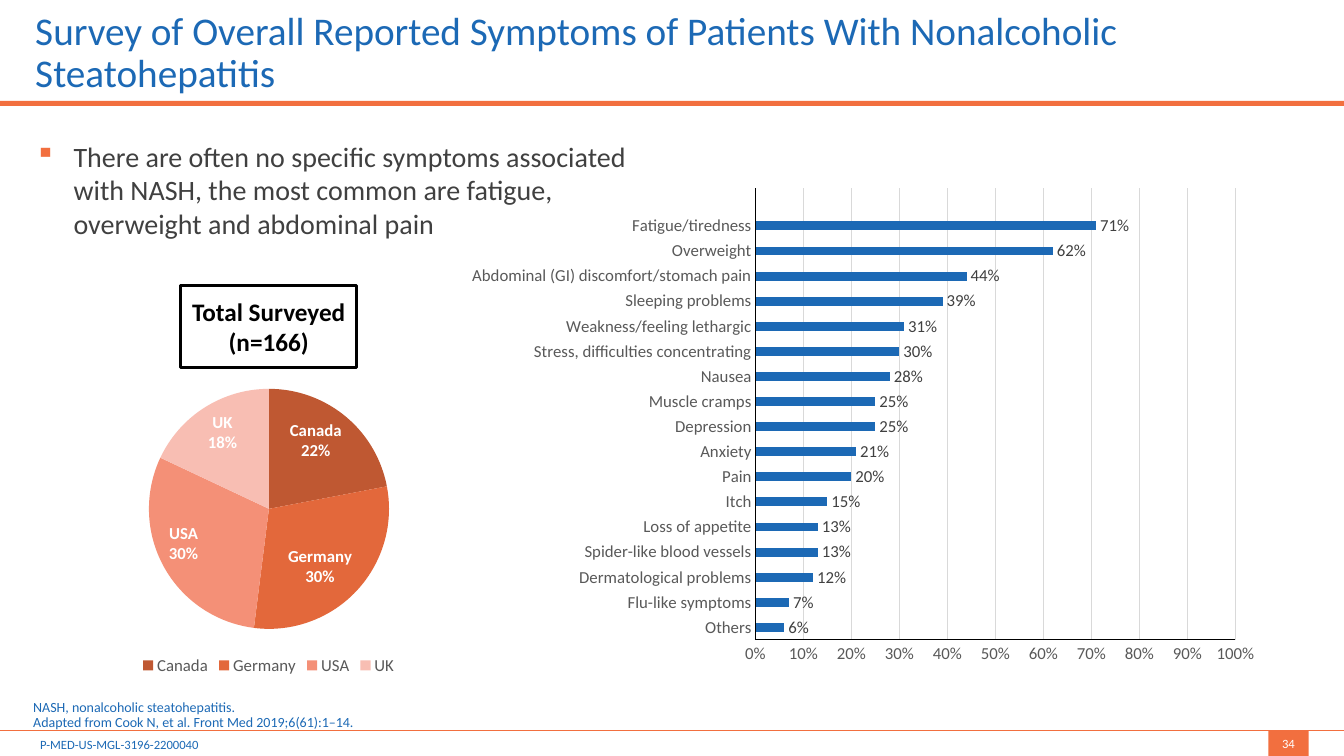
from pptx import Presentation
from pptx.chart.data import CategoryChartData
from pptx.dml.color import RGBColor
from pptx.enum import chart as ch, shapes, text
from pptx.oxml import parse_xml
from pptx.oxml.ns import nsdecls
from pptx.util import Inches, Pt

COLORS = {"orange": "F26F3F", "blue": "1C69B5", "body": "404040", "axis": "595959",
          "grid": "D9D9D9", "black": "000000", "white": "FFFFFF"}
COUNTRIES = {"Canada": (22, "BF5832"), "Germany": (30, "E3683B"),
             "USA": (30, "F49077"), "UK": (18, "F8BEB3")}
# Bottom to top; the unnamed last entry keeps a free row above the bars.
SYMPTOMS = {
    "Others": 0.06, "Flu-like symptoms": 0.07, "Dermatological problems": 0.12,
    "Spider-like blood vessels": 0.13, "Loss of appetite": 0.13, "Itch": 0.15,
    "Pain": 0.2, "Anxiety": 0.21, "Depression": 0.25, "Muscle cramps": 0.25,
    "Nausea": 0.28, "Stress, difficulties concentrating": 0.3,
    "Weakness/feeling lethargic": 0.31, "Sleeping problems": 0.39,
    "Abdominal (GI) discomfort/stomach pain": 0.44, "Overweight": 0.62,
    "Fatigue/tiredness": 0.71, "": None}


def rgb(name):
    return RGBColor.from_string(COLORS.get(name, name))


def set_font(font, size, color, bold=False):
    font.name, font.size, font.bold = "Calibri", Pt(size), bold
    font.color.rgb = rgb(color)


def set_line(line, color, width):
    line.color.rgb = rgb(color)
    line.width = Pt(width)


def write(sp, words, size, color, bold=False, margins=(0, 0, 0, 0), wrap=True,
          anchor=text.MSO_ANCHOR.TOP, align=text.PP_ALIGN.LEFT, spacing=None):
    tf = sp.text_frame
    tf.text = words
    tf.word_wrap, tf.vertical_anchor = wrap, anchor
    tf.margin_left, tf.margin_top, tf.margin_right, tf.margin_bottom = map(Inches, margins)
    for p in tf.paragraphs:
        p.alignment, p.line_spacing = align, spacing
        for r in p.runs:
            set_font(r.font, size, color, bold)
    return tf


def add_text(s, box, words, size, color, **options):
    return write(s.shapes.add_textbox(*map(Inches, box)), words, size, color, **options)


def add_rect(s, box, fill=None):
    sp = s.shapes.add_shape(shapes.MSO_SHAPE.RECTANGLE, *map(Inches, box))
    sp.shadow.inherit = False
    if fill:
        sp.fill.solid()
        sp.fill.fore_color.rgb = rgb(fill)
    else:
        sp.fill.background()
    sp.line.fill.background()
    return sp


def add_header(s, box):
    """Title with the orange rule along its lower edge."""
    x, y, w, h = box
    add_rect(s, (0, y + h, 13.33, 0.05), "orange")
    add_text(s, box, "Survey of Overall Reported Symptoms of Patients With "
             "Nonalcoholic Steatohepatitis", 28, "blue", margins=(0, 0.05, 0, 0.05),
             anchor=text.MSO_ANCHOR.BOTTOM, spacing=0.9)


def add_footer(s, box):
    """Footnote, rule, document code and page number."""
    x, y, w, h = box
    add_text(s, (x + 0.33, y - 0.3, 11.13, 0.3),
             "NASH, nonalcoholic steatohepatitis.\v"
             "Adapted from Cook N, et al. Front Med 2019;6(61):1–14.",
             10, "blue", anchor=text.MSO_ANCHOR.BOTTOM, spacing=0.9)
    rule = s.shapes.add_connector(shapes.MSO_CONNECTOR.STRAIGHT,
                                  *map(Inches, (x, y, x + w, y)))
    set_line(rule.line, "orange", 1)
    rule._element.spPr.append(parse_xml(f"<a:effectLst {nsdecls('a')}/>"))
    add_text(s, (x + 0.3, y + 0.01, 1.78, h), "P-MED-US-MGL-3196-2200040", 9, "blue",
             margins=(0.1, 0.05, 0.1, 0.05), wrap=False)
    write(add_rect(s, (x + 12.58, y, 0.4, h), "orange"), "34", 9, "white",
          anchor=text.MSO_ANCHOR.MIDDLE, align=text.PP_ALIGN.CENTER)


def add_key_message(s, box):
    tf = add_text(s, box, "There are often no specific symptoms associated with NASH, "
                  "the most common are fatigue, overweight and abdominal pain", 20, "body")
    pPr = tf.paragraphs[0]._p.get_or_add_pPr()
    pPr.set("marL", str(Inches(0.38)))
    pPr.set("indent", str(Inches(-0.38)))
    pPr.append(parse_xml(f'<a:buClr {nsdecls("a")}><a:srgbClr val="{COLORS["orange"]}"/></a:buClr>'))
    pPr.append(parse_xml(f'<a:buChar {nsdecls("a")} char="▪"/>'))


def add_chart(s, box, kind, values, plot_box, number_format="General"):
    """Chart with one series; plot_box gives the inner plot as shares of the chart."""
    data = CategoryChartData(number_format=number_format)
    data.categories = list(values)
    data.add_series("Series 1", list(values.values()))
    chart = s.shapes.add_chart(kind, *map(Inches, box), data).chart
    chart.has_title = False
    set_font(chart.font, 10, "black")
    area = chart._chartSpace.chart.plotArea
    for old in area.findall("{*}layout"):
        area.remove(old)
    sizes = "".join(f'<c:{k} val="{v}"/>' for k, v in zip("xywh", plot_box))
    area.insert(0, parse_xml(
        f'<c:layout {nsdecls("c")}><c:manualLayout><c:layoutTarget val="inner"/>'
        f'<c:xMode val="edge"/><c:yMode val="edge"/>{sizes}</c:manualLayout></c:layout>'))
    return chart


def add_country_pie(s, box):
    """Pie of surveyed countries under its framed heading."""
    x, y, w, h = box
    chart = add_chart(s, box, ch.XL_CHART_TYPE.PIE,
                      {name: value for name, (value, _) in COUNTRIES.items()},
                      (0.18, 0.045, 0.642, 0.79))
    chart.has_legend = True
    chart.legend.position = ch.XL_LEGEND_POSITION.BOTTOM
    chart.legend.include_in_layout = False
    set_font(chart.legend.font, 12, "axis")
    plot = chart.plots[0]
    plot.vary_by_categories = True
    for i, (_, color) in enumerate(COUNTRIES.values()):
        fill = plot.series[0].points[i].format.fill
        fill.solid()
        fill.fore_color.rgb = rgb(color)
    labels = plot.series[0].data_labels
    set_font(labels.font, 12, "white", True)
    labels.show_value = False
    labels.show_category_name = labels.show_percentage = True
    labels.position = ch.XL_LABEL_POSITION.INSIDE_END
    labels._element.find("{*}showBubbleSize").addnext(
        parse_xml(f"<c:separator {nsdecls('c')}>\n</c:separator>"))

    heading = add_rect(s, (x + 0.98, y - 0.89, 1.75, 0.82))
    set_line(heading.line, "black", 2.25)
    write(heading, "Total Surveyed\n(n=166)", 18, "black", bold=True, wrap=False,
          anchor=text.MSO_ANCHOR.MIDDLE, align=text.PP_ALIGN.CENTER)


def add_symptom_bars(s, box):
    chart = add_chart(s, box, ch.XL_CHART_TYPE.BAR_CLUSTERED, SYMPTOMS,
                      (0.368, 0.022, 0.589, 0.909), "0%")
    chart.has_legend = False
    for axis in (chart.category_axis, chart.value_axis):
        axis.major_tick_mark = axis.minor_tick_mark = ch.XL_TICK_MARK.NONE
        set_font(axis.tick_labels.font, 12, "axis")
        set_line(axis.format.line, "black", 0.75)
    axis = chart.value_axis
    axis.minimum_scale, axis.maximum_scale, axis.major_unit = 0, 1, 0.1
    axis.tick_labels.number_format = "0%"
    axis.tick_labels.number_format_is_linked = False
    set_line(axis.major_gridlines.format.line, "grid", 0.75)
    plot = chart.plots[0]
    plot.gap_width, plot.vary_by_categories = 182, False
    bars = plot.series[0]
    bars.format.fill.solid()
    bars.format.fill.fore_color.rgb = rgb("blue")
    labels = bars.data_labels
    set_font(labels.font, 12, "body")
    labels.show_value = True
    labels.number_format, labels.number_format_is_linked = "0%", False
    labels.position = ch.XL_LABEL_POSITION.OUTSIDE_END


def main():
    prs = Presentation()
    prs.slide_width, prs.slide_height = Inches(13.33), Inches(7.5)
    s = prs.slides.add_slide(prs.slide_layouts[6])
    add_header(s, (0.35, 0, 11.87, 1))
    add_footer(s, (0, 7.25, 13.33, 0.25))
    add_key_message(s, (0.35, 1.38, 6.07, 1.1))
    add_country_pie(s, (0.81, 3.72, 3.71, 3.02))
    add_symptom_bars(s, (4.52, 1.76, 8.08, 4.93))
    prs.save("out.pptx")


if __name__ == "__main__":
    main()
